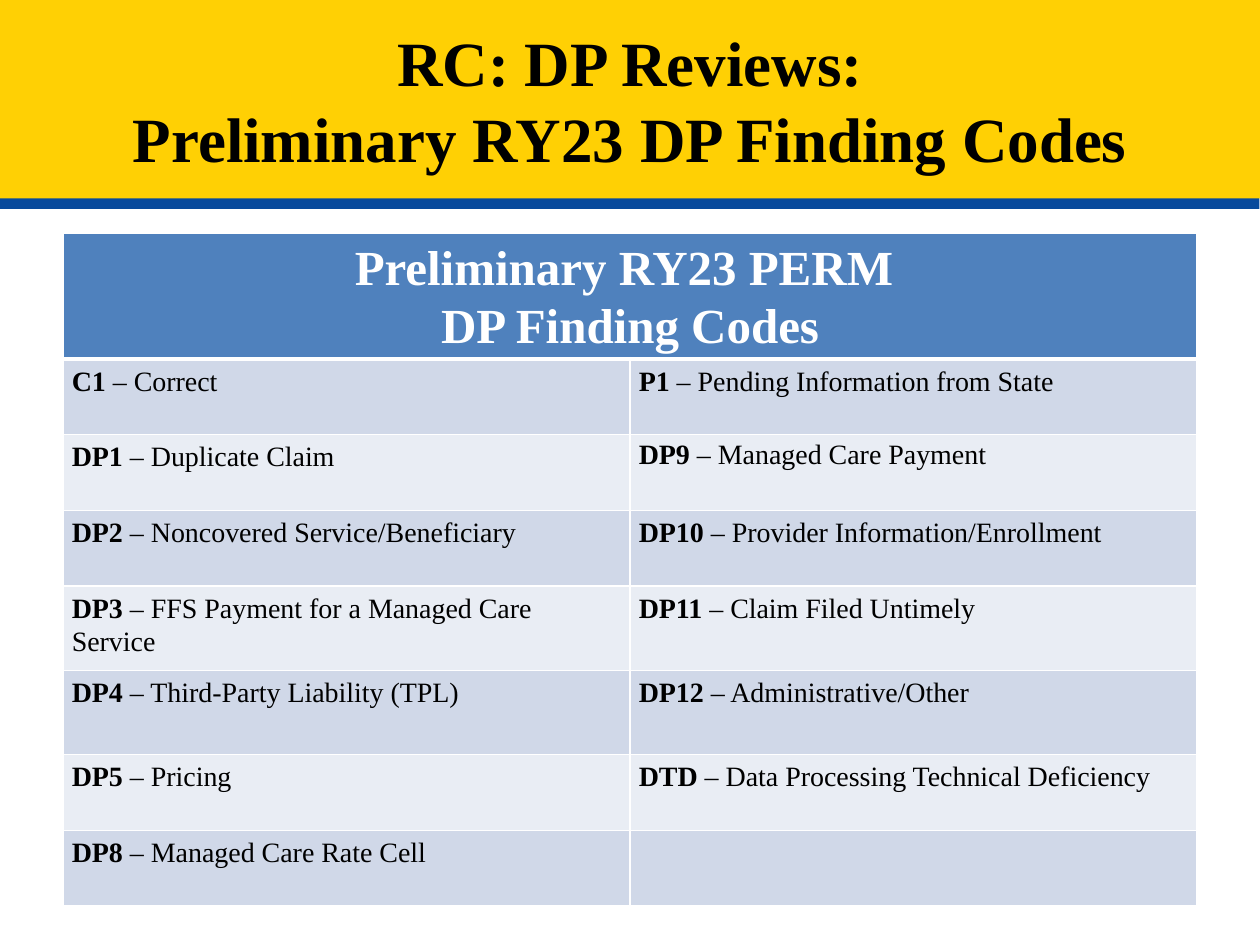
from lxml import etree
from pptx import Presentation
from pptx.dml.color import RGBColor
from pptx.enum.text import MSO_ANCHOR as Anchor, MSO_AUTO_SIZE as Fit, PP_ALIGN as Align
from pptx.oxml import parse_xml
from pptx.oxml.ns import nsdecls, qn
from pptx.util import Inches, Pt

WIDE, HIGH = 10, 7.5
HEAD = ["Preliminary RY23 PERM ", "DP Finding Codes"]
CODES = [
    ("C1 – Correct", "P1 – Pending Information from State"),
    ("DP1 – Duplicate Claim", "DP9 – Managed Care Payment"),
    ("DP2 – Noncovered Service/Beneficiary", "DP10 – Provider Information/Enrollment"),
    ("DP3 – FFS Payment for a Managed Care Service", "DP11 – Claim Filed Untimely"),
    ("DP4 – Third-Party Liability (TPL)", "DP12 – Administrative/Other"),
    ("DP5 – Pricing", "DTD – Data Processing Technical Deficiency"),
    ("DP8 – Managed Care Rate Cell", ""),
]
ROWS = [0.98] + [0.6] * 3 + [0.67] * 2 + [0.6] * 2


def tint(code):
    return RGBColor.from_string(code)


def write(para, text, size=16, color="000000", bold=False, align=None, lead=None):
    """Add text to a paragraph; a line feed becomes a line break."""
    for i, line in enumerate(text.split("\n")):
        if i:
            para.add_line_break()
        run = para.add_run()
        run.text = line
        font = run.font
        font.name, font.size, font.bold = "Times New Roman", Pt(size), bold
        font.color.rgb = tint(color)
    if align is not None:
        para.alignment = align
    if lead:
        para.line_spacing = lead


class Deck:
    bands = ("D0D8E8", "E9EDF4")
    head, rule = "4F81BD", "FFFFFF"
    gold, blue = "FFD004", "084A9C"

    def __init__(self):
        self.file = Presentation()
        self.file.slide_width, self.file.slide_height = Inches(WIDE), Inches(HIGH)
        self.slide = self.file.slides.add_slide(self.file.slide_layouts[5])

    def box(self, x, y, w, h):
        """Turn shares of the slide into lengths."""
        return [Inches(v) for v in (x * WIDE, y * HIGH, w * WIDE, h * HIGH)]

    def title(self, text, *area):
        shape = self.slide.shapes.title
        shape.left, shape.top, shape.width, shape.height = self.box(*area)
        shape.fill.solid()
        shape.fill.fore_color.rgb = tint(self.gold)
        frame = shape.text_frame
        frame.auto_size, frame.vertical_anchor = Fit.NONE, Anchor.MIDDLE
        write(frame.paragraphs[0], text, size=36, bold=True, align=Align.CENTER)
        # A hard shadow makes the blue strip below the band
        shape._element.spPr.append(parse_xml(
            f'<a:effectLst {nsdecls("a")}><a:outerShdw blurRad="0" dist="{Pt(6)}" '
            f'dir="{94 * 60000}" algn="ctr" rotWithShape="0">'
            f'<a:srgbClr val="{self.blue}"/></a:outerShdw></a:effectLst>'))

    def cell(self, cell, fill, base=1, top=1):
        cell.margin_left = cell.margin_right = Inches(0.07)
        cell.margin_top = cell.margin_bottom = Inches(0.04)
        cell.fill.solid()
        cell.fill.fore_color.rgb = tint(fill)
        props = cell._tc.get_or_add_tcPr()
        for i, (side, width) in enumerate(zip("LRTB", (1, 1, top, base))):
            line = etree.Element(qn(f"a:ln{side}"), w=str(Pt(width)))
            solid = etree.SubElement(line, qn("a:solidFill"))
            etree.SubElement(solid, qn("a:srgbClr"), val=self.rule)
            props.insert(i, line)

    def table(self, head, codes, rows, *area):
        grid = self.slide.shapes.add_table(len(rows), 2, *self.box(*area)).table
        for row, size in zip(grid.rows, rows):
            row.height = Inches(size)

        # Heading across both columns
        top = grid.cell(0, 0)
        top.merge(grid.cell(0, 1))
        for c in range(2):
            self.cell(grid.cell(0, c), self.head, base=3)
        frame = top.text_frame
        for i, line in enumerate(head):
            para = frame.add_paragraph() if i else frame.paragraphs[0]
            write(para, line, size=28, color="FFFFFF", bold=True,
                  align=Align.CENTER, lead=1.07)

        # Codes in banded rows, code in bold
        for r, pair in enumerate(codes):
            for c, text in enumerate(pair):
                cell = grid.cell(r + 1, c)
                self.cell(cell, self.bands[r % 2], top=1 if r else 3)
                code, dash, name = text.partition(" – ")
                if code:
                    para = cell.text_frame.paragraphs[0]
                    write(para, code, bold=True)
                    write(para, dash + name, lead=1 if code == "DP9" else 1.07)


deck = Deck()
deck.title("RC: DP Reviews:\nPreliminary RY23 DP Finding Codes", 0, 0, 1, 0.21)
deck.table(HEAD, CODES, ROWS, 0.05, 1.85 / HIGH, 0.9, sum(ROWS) / HIGH)
deck.file.save("out.pptx")
